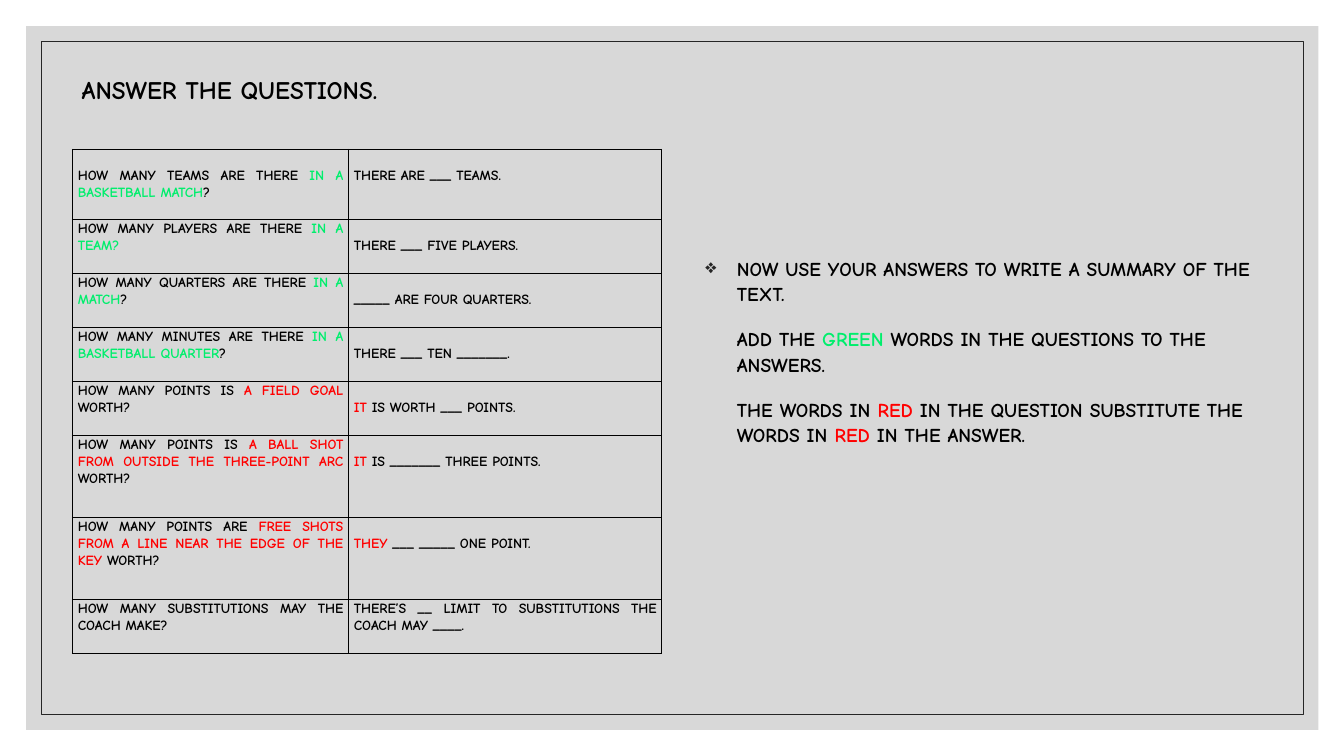
from lxml.etree import SubElement
from pptx import Presentation
from pptx.dml.color import RGBColor
from pptx.enum.shapes import MSO_SHAPE
from pptx.enum.text import MSO_ANCHOR, PP_ALIGN
from pptx.oxml import parse_xml
from pptx.oxml.ns import nsdecls, qn
from pptx.util import Pt

BLACK, GREEN, RED, GREY, DARK = "000000", "00EE6C", "FF0000", "BFBFBF", "262626"
FONT = "Comic Neue"

# Content: each text is a list of (words, colour) runs
HEADING = [("ANSWER THE QUESTIONS.", BLACK)]
BLANK_LINE = 12  # room above answers that sit one line down

# (row height, room above question, question, room above answer, answer)
ROWS = [
    (50, BLANK_LINE,
     [("HOW MANY TEAMS ARE THERE ", BLACK), ("IN A BASKETBALL MATCH", GREEN), ("?", BLACK)],
     BLANK_LINE, [("THERE ARE ___ TEAMS.", BLACK)]),
    (38.6, 0, [("HOW MANY PLAYERS ARE THERE ", BLACK), ("IN A TEAM?", GREEN)],
     BLANK_LINE, [("THERE ___ FIVE PLAYERS.", BLACK)]),
    (38.6, 0, [("HOW MANY QUARTERS ARE THERE ", BLACK), ("IN A MATCH", GREEN), ("?", BLACK)],
     BLANK_LINE, [("_____ ARE FOUR QUARTERS.", BLACK)]),
    (38.6, 0,
     [("HOW MANY MINUTES ARE THERE ", BLACK), ("IN A BASKETBALL QUARTER", GREEN), ("?", BLACK)],
     BLANK_LINE, [("THERE ___ TEN _______.", BLACK)]),
    (38.6, 0, [("HOW MANY POINTS IS ", BLACK), ("A FIELD GOAL", RED), (" WORTH?", BLACK)],
     BLANK_LINE, [("IT", RED), (" IS WORTH ___ POINTS.", BLACK)]),
    (58.6, 0,
     [("HOW MANY POINTS IS ", BLACK), ("A BALL SHOT FROM OUTSIDE THE THREE-POINT ARC", RED),
      (" WORTH?", BLACK)],
     BLANK_LINE, [("IT", RED), (" IS _______ THREE POINTS.", BLACK)]),
    (58.6, 0,
     [("HOW MANY POINTS ARE ", BLACK),
      ("FREE SHOTS FROM A LINE NEAR THE EDGE OF THE KEY", RED), (" WORTH?", BLACK)],
     BLANK_LINE, [("THEY ", RED), ("___ _____ ONE POINT.", BLACK)]),
    (38.6, 0, [("HOW MANY SUBSTITUTIONS MAY THE COACH MAKE?", BLACK)],
     0, [("THERE’S __ LIMIT TO SUBSTITUTIONS THE COACH MAY ____.", BLACK)]),
]
COLUMN_WIDTHS = (197.2, 223.8)

INSTRUCTIONS = [
    [("NOW USE YOUR ANSWERS TO WRITE A SUMMARY OF THE TEXT.", BLACK)],
    [("ADD THE ", BLACK), ("GREEN ", GREEN), ("WORDS IN THE QUESTIONS TO THE ANSWERS.", BLACK)],
    [("THE WORDS IN ", BLACK), ("RED ", RED), ("IN THE QUESTION SUBSTITUTE THE WORDS IN ", BLACK),
     ("RED ", RED), ("IN THE ANSWER.", BLACK)],
]


def color(value):
    return RGBColor.from_string(value)


def write(paragraph, runs, size, align=PP_ALIGN.LEFT, spacing=1.0, before=0):
    paragraph.alignment = align
    paragraph.line_spacing = spacing
    paragraph.space_before = Pt(before)
    for words, run_color in runs:
        run = paragraph.add_run()
        run.text = words
        run.font.name, run.font.size, run.font.bold = FONT, Pt(size), True
        run.font.color.rgb = color(run_color)


def add_panel(slide, left, top, width, height):
    panel = slide.shapes.add_shape(MSO_SHAPE.RECTANGLE, Pt(left), Pt(top), Pt(width), Pt(height))
    panel.shadow.inherit = False
    panel.fill.background()
    panel.line.fill.background()
    return panel


def add_borders(cell):
    properties = cell._tc.get_or_add_tcPr()
    for position, side in enumerate(("lnL", "lnR", "lnT", "lnB")):
        properties.insert(position, parse_xml(
            f'<a:{side} {nsdecls("a")} w="12700"><a:solidFill><a:srgbClr val="{BLACK}"/>'
            f'</a:solidFill></a:{side}>'))


def add_bullet(paragraph):
    properties = paragraph._p.get_or_add_pPr()
    bullet_color = SubElement(properties, qn("a:buClr"))
    SubElement(bullet_color, qn("a:srgbClr"), val=DARK)
    SubElement(properties, qn("a:buChar"), char="❖")


presentation = Presentation()
presentation.slide_width, presentation.slide_height = Pt(960), Pt(540)
slide = presentation.slides.add_slide(presentation.slide_layouts[5])

# Grey background panel and thin frame, behind everything else
background = add_panel(slide, 18.7, 18.7, 923, 502.6)
background.fill.solid()
background.fill.fore_color.rgb = color(GREY)
SubElement(background.element.spPr.find(f".//{qn('a:srgbClr')}"), qn("a:alpha"), val="60000")
frame = add_panel(slide, 29.5, 29.5, 901.4, 481)
frame.line.color.rgb = color(DARK)
frame.line.width = Pt(0.5)
for position, panel in enumerate((background, frame), start=2):
    panel.element.getparent().insert(position, panel.element)

# Heading
title = slide.shapes.title
title.left, title.top, title.width, title.height = Pt(51.1), Pt(49.7), Pt(304.6), Pt(28.8)
title.text_frame.vertical_anchor = MSO_ANCHOR.MIDDLE
write(title.text_frame.paragraphs[0], HEADING, 18)

# Question and answer table
table_height = sum(row[0] for row in ROWS)
table = slide.shapes.add_table(len(ROWS), 2, Pt(51.8), Pt(106.8),
                               Pt(sum(COLUMN_WIDTHS)), Pt(table_height)).table
table.first_row = table.horz_banding = False
for column, width in zip(table.columns, COLUMN_WIDTHS):
    column.width = Pt(width)
for row, (height, question_room, question, answer_room, answer) in zip(table.rows, ROWS):
    row.height = Pt(height)
    for cell, room, runs in zip(row.cells, (question_room, answer_room), (question, answer)):
        cell.margin_left = cell.margin_right = Pt(3.8)
        cell.margin_top, cell.margin_bottom = Pt(room), Pt(0)
        cell.fill.background()
        add_borders(cell)
        write(cell.text_frame.paragraphs[0], runs, 10, align=PP_ALIGN.JUSTIFY, spacing=1.07)

# Instructions on the right
box = slide.shapes.add_textbox(Pt(496.8), Pt(126), Pt(427), Pt(283.7))
text_frame = box.text_frame
text_frame.word_wrap = True
text_frame.vertical_anchor = MSO_ANCHOR.MIDDLE
text_frame.margin_bottom = Pt(38)
for index, runs in enumerate(INSTRUCTIONS):
    paragraph = text_frame.add_paragraph() if index else text_frame.paragraphs[0]
    write(paragraph, runs, 14, spacing=1.07, before=14.3 if index else 0)
    properties = paragraph._p.get_or_add_pPr()
    properties.set("marL", str(Pt(22.5)))
    properties.set("indent", str(0 if index else -Pt(22.5)))
    if index == 0:
        add_bullet(paragraph)

presentation.save("out.pptx")
